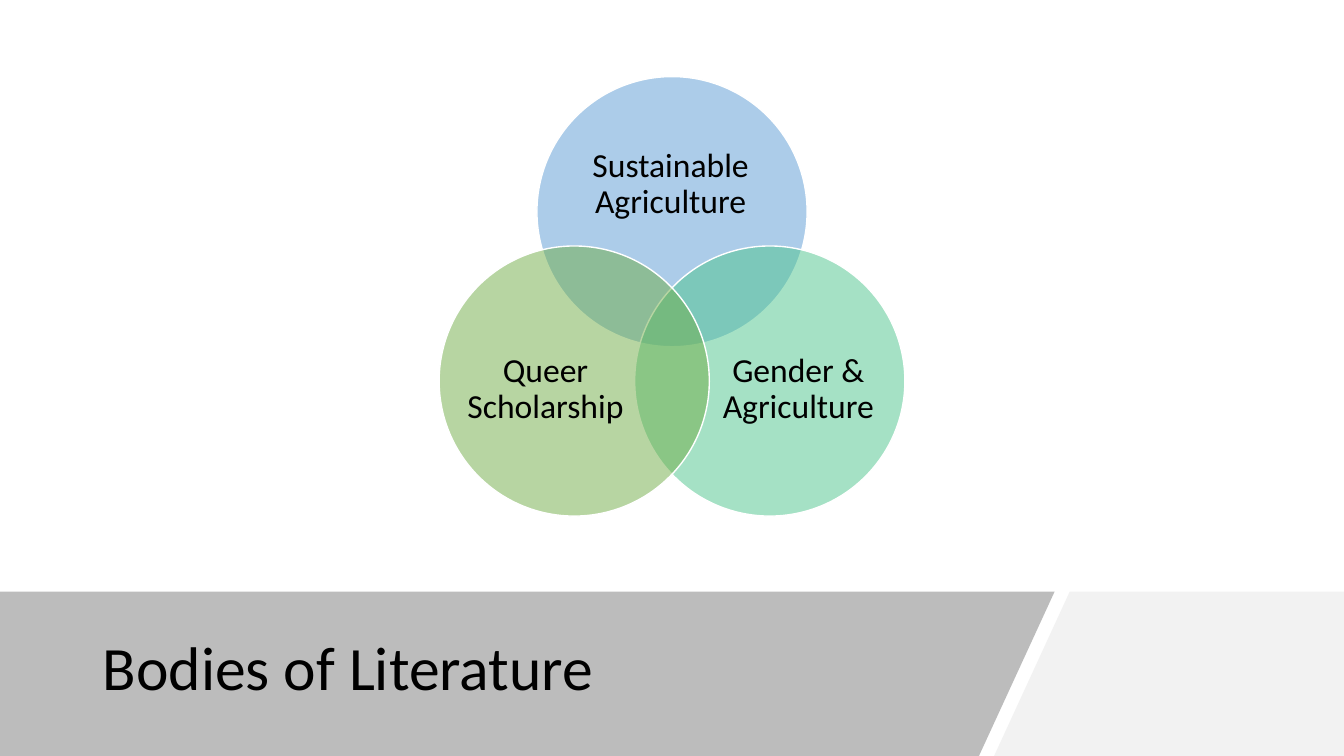
"""Build the "Bodies of Literature" slide: a three-circle Venn diagram over a title band."""
from math import cos, radians, sin

from lxml import etree
from pptx import Presentation
from pptx.dml.color import RGBColor
from pptx.enum.shapes import MSO_SHAPE
from pptx.enum.text import MSO_ANCHOR, PP_ALIGN
from pptx.oxml.ns import qn
from pptx.util import Inches, Pt

OVAL = MSO_SHAPE.OVAL
MIDDLE = MSO_ANCHOR.MIDDLE
LEFT, CENTER = PP_ALIGN.LEFT, PP_ALIGN.CENTER

W, H = 13.33, 7.5
FONT, BLACK, WHITE = "Calibri", "000000", "FFFFFF"
TITLE = "Bodies of Literature"
TITLE_BOX = (0.92, 6.05, 8.83, 1.2)

BAND_TOP, SLANT = 5.87, 0.75
BANDS = [
    ([(10.61, BAND_TOP), (W, BAND_TOP), (W, H), (10.61 - SLANT, H)], "F2F2F2", 100),
    ([(0, BAND_TOP), (10.46, BAND_TOP), (10.46 - SLANT, H), (0, H)], "595959", 40),
]

DIAMETER, RING = 2.68, 1.12
RING_X, RING_Y = W / 2, 3.22
CIRCLES = [
    ("Sustainable Agriculture", -90, "5B9BD5", (0.13, 0.175, 0.73, 0.45)),
    ("Gender & Agriculture", 30, "4DC58D", (0.306, 0.257, 0.6, 0.55)),
    ("Queer Scholarship", 150, "70AD47", (0.094, 0.257, 0.6, 0.55)),
]


def rgb(value):
    """Turn a hex string into a colour."""
    return RGBColor.from_string(value)


def paint(shape, color, opacity):
    """Fill a shape with a colour at an opacity in percent."""
    shape.shadow.inherit = False
    shape.fill.solid()
    shape.fill.fore_color.rgb = rgb(color)
    if opacity < 100:
        clr = shape.fill._xPr.find(qn("a:solidFill"))[0]
        etree.SubElement(clr, qn("a:alpha")).set("val", str(opacity * 1000))


def place(shape, box):
    """Move and size a shape, in inches."""
    shape.left, shape.top, shape.width, shape.height = map(Inches, box)


def write(shape, text, size, align):
    """Write one middle-anchored paragraph into a shape."""
    tf = shape.text_frame
    tf.word_wrap = True
    tf.vertical_anchor = MIDDLE
    p = tf.paragraphs[0]
    p.alignment = align
    p.line_spacing = 0.9
    r = p.add_run()
    r.text = text
    r.font.name = FONT
    r.font.size = Pt(size)
    r.font.color.rgb = rgb(BLACK)
    return tf


def add_band(s, points, color, opacity):
    """Draw one slanted band along the foot of the slide."""
    corners = [(Inches(x), Inches(y)) for x, y in points]
    builder = s.shapes.build_freeform(*corners[0])
    builder.add_line_segments(corners[1:], close=True)
    band = builder.convert_to_shape()
    paint(band, color, opacity)
    band.line.fill.background()


def add_circle(s, label, angle, color, label_share):
    """Draw one circle of the ring and its label."""
    left = RING_X + RING * cos(radians(angle)) - DIAMETER / 2
    top = RING_Y + RING * sin(radians(angle)) - DIAMETER / 2
    circle = s.shapes.add_shape(OVAL, 0, 0, 0, 0)
    place(circle, (left, top, DIAMETER, DIAMETER))
    paint(circle, color, 50)
    circle.line.color.rgb = rgb(WHITE)
    circle.line.width = Pt(1)

    x, y, w, h = (share * DIAMETER for share in label_share)
    box = s.shapes.add_textbox(0, 0, 0, 0)
    place(box, (left + x, top + y, w, h))
    tf = write(box, label, 24, CENTER)
    tf.margin_left = tf.margin_right = tf.margin_top = tf.margin_bottom = 0


def main():
    """Assemble and save the slide."""
    prs = Presentation()
    prs.slide_width, prs.slide_height = Inches(W), Inches(H)
    s = prs.slides.add_slide(prs.slide_layouts[5])
    for band in BANDS:
        add_band(s, *band)
    title = s.shapes.title
    place(title, TITLE_BOX)
    write(title, TITLE, 44, LEFT)
    title.element.getparent().append(title.element)
    for circle in CIRCLES:
        add_circle(s, *circle)
    prs.save("out.pptx")


if __name__ == "__main__":
    main()
